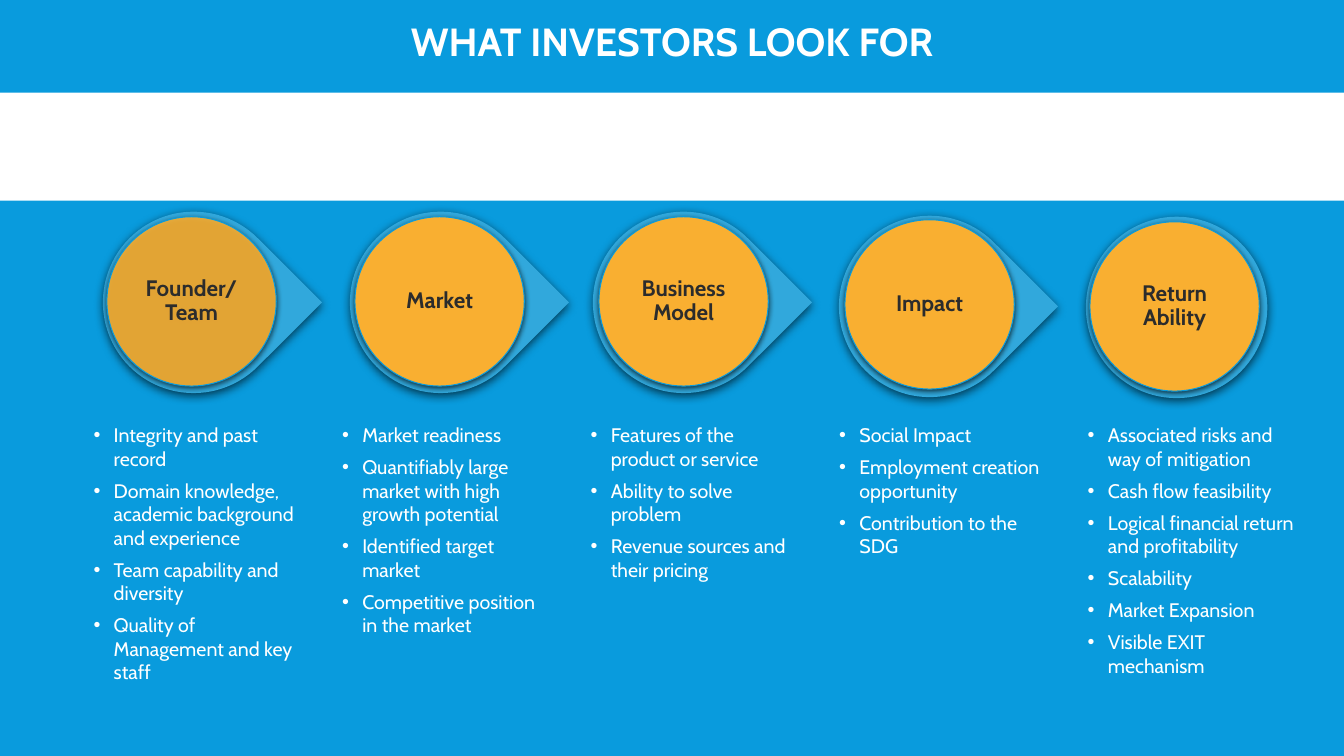
import pptx
import pptx.util
import pptx.dml.color
import pptx.enum.shapes
import pptx.enum.text
import pptx.oxml.ns
from lxml import etree

Inches = pptx.util.Inches
Pt = pptx.util.Pt
RGBColor = pptx.dml.color.RGBColor
SHAPE = pptx.enum.shapes.MSO_SHAPE
ALIGN = pptx.enum.text.PP_ALIGN
ANCHOR = pptx.enum.text.MSO_ANCHOR
qn = pptx.oxml.ns.qn

BLUE = RGBColor(0x09, 0x9B, 0xDD)
LIGHT_BLUE = RGBColor(0x31, 0xA8, 0xDC)
ORANGE = RGBColor(0xF9, 0xAF, 0x31)
DARK = RGBColor(0x2C, 0x2C, 0x2C)
WHITE = RGBColor(0xFF, 0xFF, 0xFF)
FONT = "Cabin"

HALO_SIZE, DISC_SIZE = 1.8, 1.68
COLUMN_LEFT, COLUMN_STEP = 0.83, 2.465

# Label, halo left and top, disc left and top, disc opacity, bullet box height, points
CRITERIA = [
    ("Founder/ Team", (1.02, 2.1), (1.06, 2.15), 90, 2.71,
     ["Integrity and past record",
      "Domain knowledge, academic background and experience",
      "Team capability and diversity",
      "Quality of Management and key staff"]),
    ("Market", (3.47, 2.1), (3.52, 2.15), 100, 2.24,
     ["Market readiness",
      "Quantifiably large market with high growth potential",
      "Identified target market",
      "Competitive position in the market"]),
    ("Business Model", (5.88, 2.1), (5.94, 2.15), 100, 1.68,
     ["Features of the product or service",
      "Ability to solve problem",
      "Revenue sources and their pricing"]),
    ("Impact", (8.32, 2.14), (8.38, 2.18), 100, 1.45,
     ["Social Impact",
      "Employment creation opportunity",
      "Contribution to the SDG"]),
    ("Return Ability", (10.77, 2.15), (10.81, 2.2), 100, 2.64,
     ["Associated risks and way of mitigation",
      "Cash flow feasibility",
      "Logical financial return and profitability",
      "Scalability",
      "Market Expansion",
      "Visible EXIT mechanism"]),
]


def add_filled(kind, left, top, width, height, color, shadow=None):
    """Add a borderless shape; shadow is (opacity %, blur pt, distance pt)."""
    shape = slide.shapes.add_shape(
        kind, Inches(left), Inches(top), Inches(width), Inches(height))
    shape.fill.solid()
    shape.fill.fore_color.rgb = color
    shape.line.fill.background()
    shape.shadow.inherit = False
    if shadow:
        opacity, blur, distance = shadow
        effects = shape._element.spPr.find(qn("a:effectLst"))
        outer = etree.SubElement(
            effects, qn("a:outerShdw"), blurRad=str(Pt(blur)),
            dist=str(Pt(distance)), dir="5400000", algn="ctr", rotWithShape="0")
        black = etree.SubElement(outer, qn("a:srgbClr"), val="000000")
        etree.SubElement(black, qn("a:alpha"), val=str(opacity * 1000))
    return shape


def format_text(paragraph, size, color, bold=False):
    font = paragraph.runs[0].font
    font.name = FONT
    font.size = Pt(size)
    font.bold = bold
    font.color.rgb = color


presentation = pptx.Presentation()
presentation.slide_width = Inches(13.33)
presentation.slide_height = Inches(7.5)
slide = presentation.slides.add_slide(presentation.slide_layouts[6])
slide.background.fill.solid()
slide.background.fill.fore_color.rgb = BLUE

# White band, partly covered by the title bar
add_filled(SHAPE.RECTANGLE, 0, 0.19, 13.33, 1.8, WHITE)
title = add_filled(SHAPE.RECTANGLE, 0, -0.06, 13.33, 0.98, BLUE)
title_frame = title.text_frame
title_frame.margin_left = title_frame.margin_right = 0
title_frame.vertical_anchor = ANCHOR.MIDDLE
title_frame.text = "WHAT INVESTORS LOOK FOR"
title_frame.paragraphs[0].alignment = ALIGN.CENTER
title_frame.paragraphs[0].line_spacing = 0.9
format_text(title_frame.paragraphs[0], 28, WHITE, bold=True)

# Chain of criteria, last one first so that each arrow lies over the next halo
for label, halo_at, disc_at, opacity, box_height, points in reversed(CRITERIA):
    is_last = label == CRITERIA[-1][0]
    halo = add_filled(SHAPE.OVAL if is_last else SHAPE.TEAR, *halo_at,
                      HALO_SIZE, HALO_SIZE, LIGHT_BLUE, (63, 7, 2.2))
    halo.rotation = 0 if is_last else 45

    disc = add_filled(SHAPE.OVAL, *disc_at, DISC_SIZE, DISC_SIZE,
                      ORANGE, (68, 4, 1.2))
    disc.line.color.rgb = BLUE
    disc.line.width = Pt(0.75)
    if opacity < 100:
        disc_color = disc._element.spPr.find(qn("a:solidFill"))[0]
        etree.SubElement(disc_color, qn("a:alpha"), val=str(opacity * 1000))

    disc_frame = disc.text_frame
    disc_frame.margin_left = disc_frame.margin_right = Inches(0.02)
    disc_frame.margin_top = disc_frame.margin_bottom = Inches(0.02)
    disc_frame.vertical_anchor = ANCHOR.MIDDLE
    disc_frame.word_wrap = True
    disc_frame.text = label
    disc_frame.paragraphs[0].alignment = ALIGN.CENTER
    disc_frame.paragraphs[0].line_spacing = 0.9
    format_text(disc_frame.paragraphs[0], 16, DARK, bold=True)

# Bullet columns
for column, (label, halo_at, disc_at, opacity, box_height, points) in enumerate(CRITERIA):
    details = slide.shapes.add_textbox(
        Inches(COLUMN_LEFT + column * COLUMN_STEP), Inches(4.15),
        Inches(2.3), Inches(box_height))
    details_frame = details.text_frame
    details_frame.word_wrap = True
    details_frame.auto_size = pptx.enum.text.MSO_AUTO_SIZE.SHAPE_TO_FIT_TEXT
    details_frame.text = "\n".join(points)
    for paragraph in details_frame.paragraphs:
        paragraph.space_after = Pt(6)
        format_text(paragraph, 14, WHITE)
        properties = paragraph._p.get_or_add_pPr()
        properties.set("marL", str(Inches(0.2)))
        properties.set("indent", str(Inches(-0.2)))
        etree.SubElement(properties, qn("a:buFont"), typeface="Arial")
        etree.SubElement(properties, qn("a:buChar"), char="•")

presentation.save("out.pptx")
